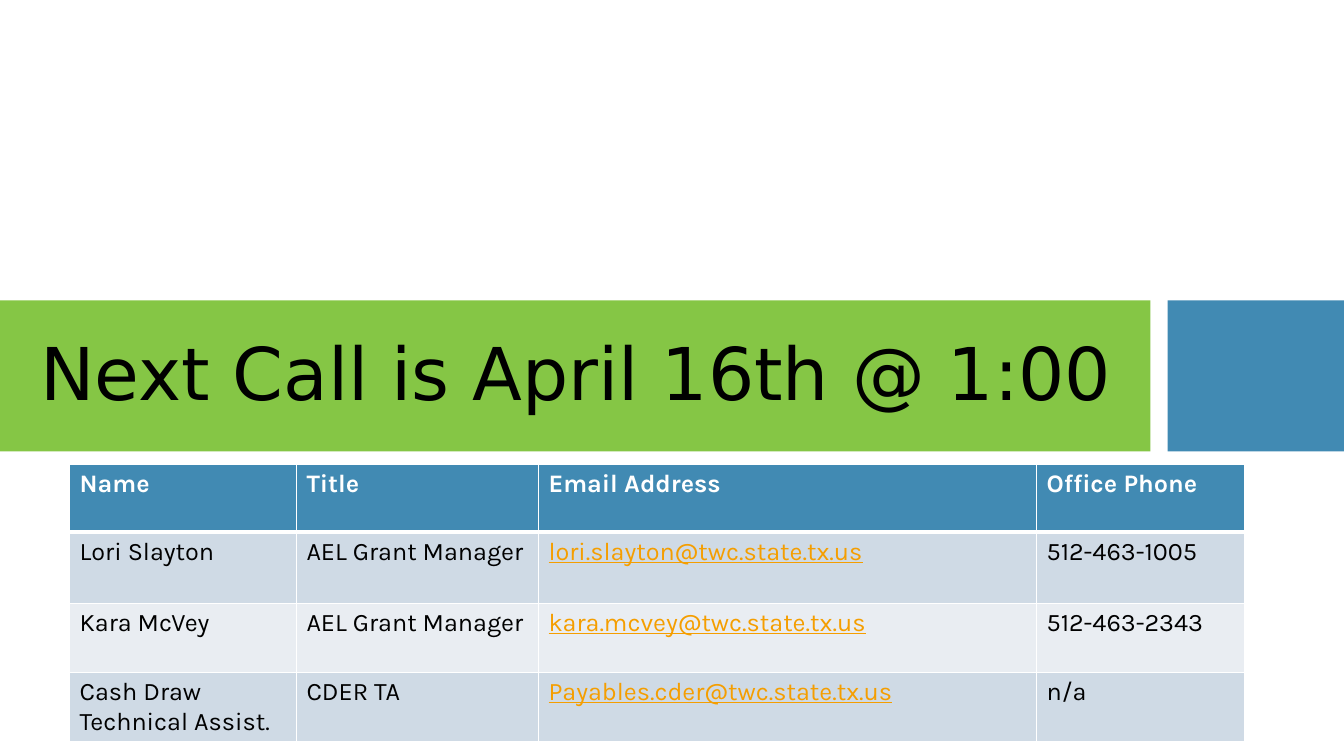
from dataclasses import dataclass

from lxml import etree
from pptx import Presentation
from pptx import util as u
from pptx.dml.color import RGBColor
from pptx.enum import shapes, text
from pptx.oxml.ns import qn

PX = 9144  # EMU per px, 100 px to the inch

COLORS = {
    "green": "85C645",
    "blue": "418AB3",
    "band_dark": "CFDAE5",
    "band_light": "E9EDF2",
    "link": "F59E00",
    "black": "000000",
    "white": "FFFFFF",
}
TITLE_FONT = "DejaVu Sans"
TABLE_FONT = "Karla"

COLUMN_WIDTHS = (225, 240, 494, 206)
ROW_HEIGHTS = (67, 71, 68, 68)
EMAIL_COLUMN = 2
HEADINGS = ("Name", "Title", "Email Address", "Office Phone")


@dataclass(frozen=True)
class Bar:
    left: int
    width: int
    color: str


@dataclass(frozen=True)
class Contact:
    name: str
    title: str
    email: str
    phone: str


BARS = (Bar(0, 1141, "green"), Bar(1158, 175, "blue"))
CONTACTS = (
    Contact("Lori Slayton", "AEL Grant Manager", "lori.slayton@twc.state.tx.us", "512-463-1005"),
    Contact("Kara McVey", "AEL Grant Manager", "kara.mcvey@twc.state.tx.us", "512-463-2343"),
    Contact("Cash Draw Technical Assist.", "CDER TA", "Payables.cder@twc.state.tx.us", "n/a"),
)


def px(length: int) -> u.Emu:
    return u.Emu(length * PX)


def rgb(name: str) -> RGBColor:
    return RGBColor.from_string(COLORS[name])


def add_run(paragraph, content: str, font_name: str, size: int, color: str,
            bold: bool = False, underline: bool = False) -> None:
    run = paragraph.add_run()
    run.text = content
    run.font.name = font_name
    run.font.size = u.Pt(size)
    run.font.bold = bold
    run.font.underline = underline
    run.font.color.rgb = rgb(color)


def add_bar(slide, bar: Bar) -> None:
    shape = slide.shapes.add_shape(
        shapes.MSO_SHAPE.RECTANGLE, px(bar.left), px(298), px(bar.width), px(150))
    shape.shadow.inherit = False
    shape.fill.solid()
    shape.fill.fore_color.rgb = rgb(bar.color)
    shape.line.fill.background()


def write_title(slide) -> None:
    title = slide.shapes.title
    title.left, title.top, title.width, title.height = px(17), px(314), px(1109), px(119)
    frame = title.text_frame
    frame.word_wrap = True
    frame.auto_size = text.MSO_AUTO_SIZE.NONE
    frame.vertical_anchor = text.MSO_ANCHOR.MIDDLE
    paragraph = frame.paragraphs[0]
    paragraph.alignment = text.PP_ALIGN.CENTER
    paragraph.line_spacing = 0.9
    add_run(paragraph, "Next Call is April 16th @ 1:00", TITLE_FONT, 52, "black")


def set_borders(cell, top: int, bottom: int) -> None:
    """Draw white cell borders, with top and bottom widths in points."""
    properties = cell._tc.get_or_add_tcPr()
    widths = {"a:lnL": 1, "a:lnR": 1, "a:lnT": top, "a:lnB": bottom}
    for position, (tag, width) in enumerate(widths.items()):
        line = etree.Element(qn(tag), w=str(u.Pt(width)))
        fill = etree.SubElement(line, qn("a:solidFill"))
        etree.SubElement(fill, qn("a:srgbClr"), val=COLORS["white"])
        properties.insert(position, line)


def add_contact_table(slide) -> None:
    rows = [HEADINGS] + [(c.name, c.title, c.email, c.phone) for c in CONTACTS]
    table = slide.shapes.add_table(
        len(rows), len(HEADINGS), px(69), px(461),
        px(sum(COLUMN_WIDTHS)), px(sum(ROW_HEIGHTS))).table
    for column, width in zip(table.columns, COLUMN_WIDTHS):
        column.width = px(width)
    for row, height in zip(table.rows, ROW_HEIGHTS):
        row.height = px(height)

    for row_index, values in enumerate(rows):
        is_header = row_index == 0
        band = "blue" if is_header else "band_dark" if row_index % 2 else "band_light"
        for column_index, value in enumerate(values):
            cell = table.cell(row_index, column_index)
            cell.fill.solid()
            cell.fill.fore_color.rgb = rgb(band)
            set_borders(cell, top=3 if row_index == 1 else 1, bottom=3 if is_header else 1)
            is_email = column_index == EMAIL_COLUMN and not is_header
            color = "white" if is_header else "link" if is_email else "black"
            add_run(cell.text_frame.paragraphs[0], value, TABLE_FONT, 18, color,
                    bold=is_header, underline=is_email)


def main() -> None:
    presentation = Presentation()
    presentation.slide_width, presentation.slide_height = px(1333), px(750)
    title_only = presentation.slide_layouts[5]
    slide = presentation.slides.add_slide(title_only)
    for bar in BARS:
        add_bar(slide, bar)
    # Bring the title in front of the bars.
    slide.shapes._spTree.append(slide.shapes.title._element)
    write_title(slide)
    add_contact_table(slide)
    presentation.save("out.pptx")


if __name__ == "__main__":
    main()
